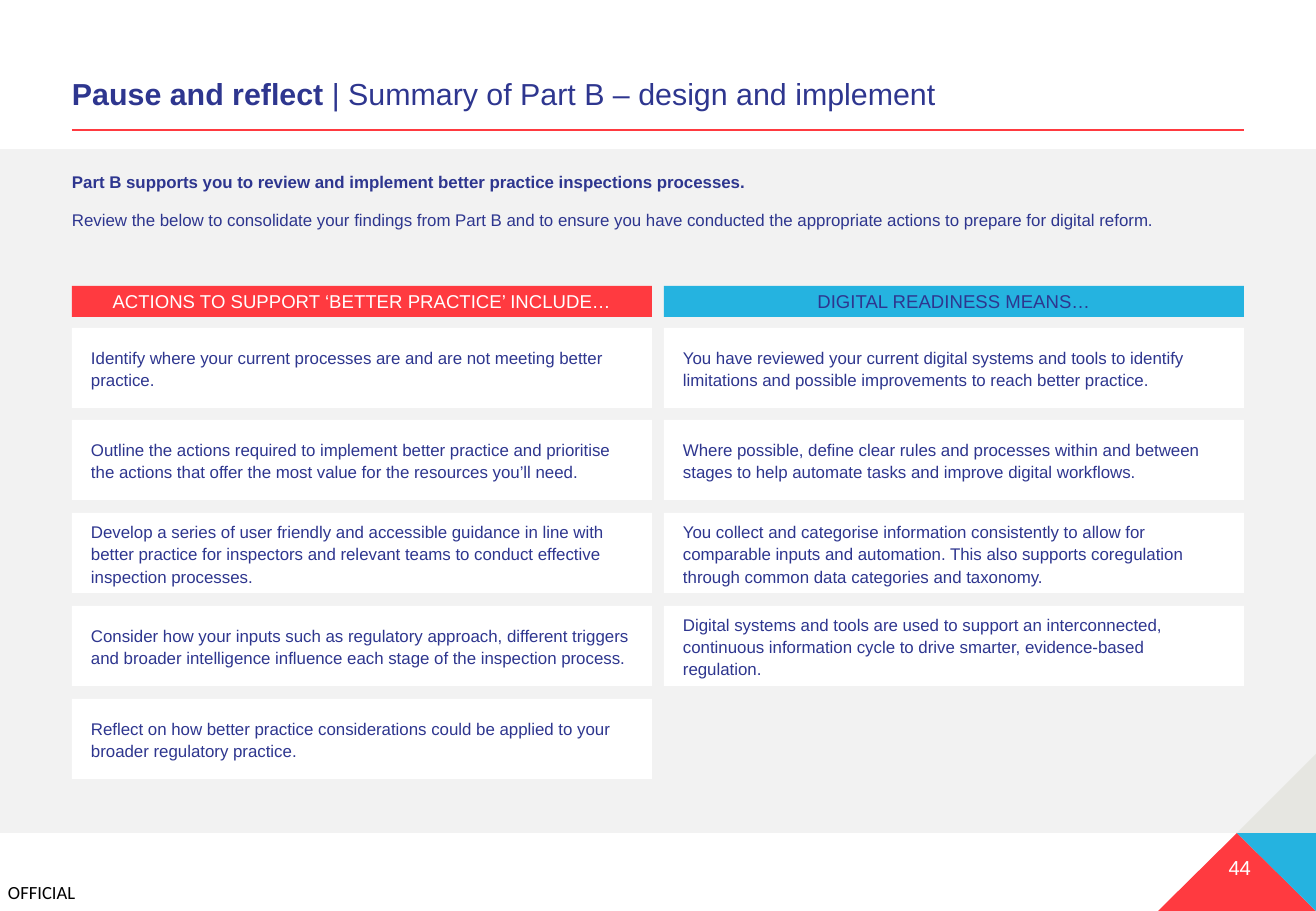
from lxml.etree import SubElement
from pptx import Presentation
from pptx.dml.color import RGBColor
from pptx.enum.shapes import MSO_CONNECTOR, MSO_SHAPE
from pptx.enum.text import MSO_ANCHOR as Anchor, PP_ALIGN as Align
from pptx.oxml.ns import qn
from pptx.util import Pt

PX = 7526  # EMU per px
COLORS = {
    "navy": "2E368F", "red": "FF3A40", "blue": "25B3E0", "band": "F2F2F2",
    "stone": "E6E6E1", "white": "FFFFFF", "black": "000000",
}
LEFT, CONTENT_WIDTH = 72, 1172
COLUMN_WIDTH, COLUMN_PITCH = 580, 592
CARD_TOP, CARD_HEIGHT, CARD_SPAN = 328, 80, 371

COLUMNS = [
    ("ACTIONS TO SUPPORT ‘BETTER PRACTICE’ INCLUDE…", "red", "white", [
        "Identify where your current processes are and are not meeting better practice.",
        "Outline the actions required to implement better practice and prioritise the actions "
        "that offer the most value for the resources you’ll need.",
        "Develop a series of user friendly and accessible guidance in line with better practice "
        "for inspectors and relevant teams to conduct effective inspection processes.",
        "Consider how your inputs such as regulatory approach, different triggers and broader "
        "intelligence influence each stage of the inspection process.",
        "Reflect on how better practice considerations could be applied to your broader "
        "regulatory practice.",
    ]),
    ("DIGITAL READINESS MEANS…", "blue", "navy", [
        "You have reviewed your current digital systems and tools to identify limitations and "
        "possible improvements to reach better practice.",
        "Where possible, define clear rules and processes within and between stages to help "
        "automate tasks and improve digital workflows.",
        "You collect and categorise information consistently to allow for comparable inputs and "
        "automation. This also supports coregulation through common data categories and taxonomy.",
        "Digital systems and tools are used to support an interconnected, continuous information "
        "cycle to drive smarter, evidence-based regulation.",
    ]),
]
CORNER_TRIANGLES = [
    ("red", [(1237, 833), (1158, 911), (1316, 911)]),
    ("blue", [(1316, 833), (1237, 833), (1316, 911)]),
    ("stone", [(1316, 754), (1237, 833), (1316, 833)]),
]


def color(name):
    return RGBColor.from_string(COLORS[name])


def to_emu(*lengths):
    return [length * PX for length in lengths]


def paint(shape, fill):
    shape.shadow.inherit = False
    shape.fill.solid()
    shape.fill.fore_color.rgb = color(fill)
    shape.line.fill.background()


def add_rectangle(slide, box, fill):
    shape = slide.shapes.add_shape(MSO_SHAPE.RECTANGLE, *to_emu(*box))
    paint(shape, fill)
    return shape


def add_triangle(slide, points, fill):
    builder = slide.shapes.build_freeform(*points[0], scale=PX)
    builder.add_line_segments(points[1:], close=True)
    paint(builder.convert_to_shape(), fill)


def add_rule(slide, x1, y1, x2, y2):
    rule = slide.shapes.add_connector(MSO_CONNECTOR.STRAIGHT, *to_emu(x1, y1, x2, y2))
    rule.line.color.rgb = color("red")
    rule.line.width = Pt(1.25)
    SubElement(rule._element.spPr, qn("a:effectLst"))


def set_frame(shape, side, edge, anchor, wrap=True):
    """Set the insets (side, then top and bottom), anchor and wrapping."""
    frame = shape.text_frame
    frame.margin_left = frame.margin_right = side * PX
    frame.margin_top = frame.margin_bottom = edge * PX
    frame.vertical_anchor = anchor
    frame.word_wrap = wrap
    return frame


def add_text_box(slide, box, side=0, edge=6, anchor=Anchor.TOP, wrap=True):
    return set_frame(slide.shapes.add_textbox(*to_emu(*box)), side, edge, anchor, wrap)


def style(paragraph, size, text_color, align=Align.LEFT, font_name="Arial", bold=False):
    paragraph.alignment = align
    font = paragraph.font
    font.name, font.size, font.bold = font_name, Pt(size), bold
    font.color.rgb = color(text_color)


def add_label(slide, box, text, size, text_color, align=Align.LEFT, font_name="Arial",
              edge=6, wrap=True):
    paragraph = add_text_box(slide, box, edge=edge, wrap=wrap).paragraphs[0]
    paragraph.text = text
    style(paragraph, size, text_color, align, font_name)


def add_title(slide):
    frame = add_text_box(slide, (LEFT, 72, CONTENT_WIDTH, 46), anchor=Anchor.BOTTOM)
    paragraph = frame.paragraphs[0]
    paragraph.line_spacing = 0.9
    style(paragraph, 18, "navy")
    paragraph.add_run().text = "Pause and reflect "
    paragraph.runs[0].font.bold = True
    paragraph.add_run().text = "| Summary of Part B – design and implement"


def add_introduction(slide):
    frame = add_text_box(slide, (LEFT, 166, CONTENT_WIDTH, 98))
    lead = frame.paragraphs[0]
    lead.text = "Part B supports you to review and implement better practice inspections processes."
    lead.space_after = Pt(6)
    style(lead, 10, "navy", bold=True)
    detail = frame.add_paragraph()
    detail.text = ("Review the below to consolidate your findings from Part B and to ensure you "
                   "have conducted the appropriate actions to prepare for digital reform.")
    detail.space_before = Pt(4)
    style(detail, 10, "navy")


def add_header(slide, left, text, fill, text_color):
    shape = add_rectangle(slide, (left, 286, COLUMN_WIDTH, 31), fill)
    paragraph = set_frame(shape, 12, 6, Anchor.MIDDLE).paragraphs[0]
    paragraph.text = text
    style(paragraph, 11, text_color, Align.CENTER)


def add_card(slide, left, top, text):
    shape = add_rectangle(slide, (left, top, COLUMN_WIDTH, CARD_HEIGHT), "white")
    paragraph = set_frame(shape, 19, 6, Anchor.MIDDLE).paragraphs[0]
    paragraph.text = text
    paragraph.line_spacing = 1.1
    style(paragraph, 10, "navy")


def main():
    presentation = Presentation()
    presentation.slide_width, presentation.slide_height = to_emu(1316, 911)
    slide = presentation.slides.add_slide(presentation.slide_layouts[6])

    add_label(slide, (8, 881, 72, 22), "OFFICIAL", 11, "black",
              font_name="Calibri", edge=0, wrap=False)
    add_rectangle(slide, (0, 149, 1316, 684), "band")
    for fill, points in CORNER_TRIANGLES:
        add_triangle(slide, points, fill)
    add_label(slide, (1146, 849, 105, 37), "44", 12, "white", Align.RIGHT)
    add_rule(slide, LEFT, 130, LEFT + CONTENT_WIDTH, 130)
    add_title(slide)
    add_introduction(slide)

    for column, (heading, fill, text_color, cards) in enumerate(COLUMNS):
        left = LEFT + column * COLUMN_PITCH
        add_header(slide, left, heading, fill, text_color)
        for row, text in enumerate(cards):
            add_card(slide, left, CARD_TOP + row * CARD_SPAN // 4, text)

    presentation.save("out.pptx")


if __name__ == "__main__":
    main()
